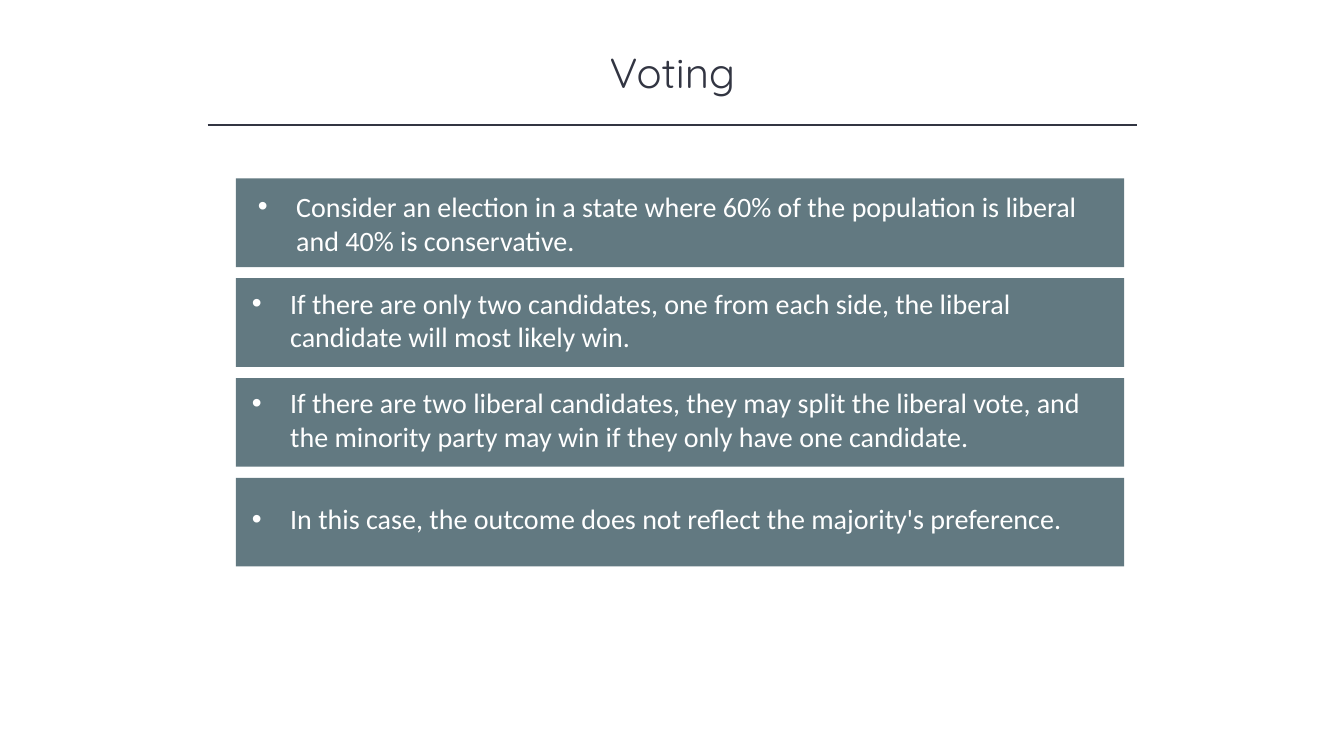
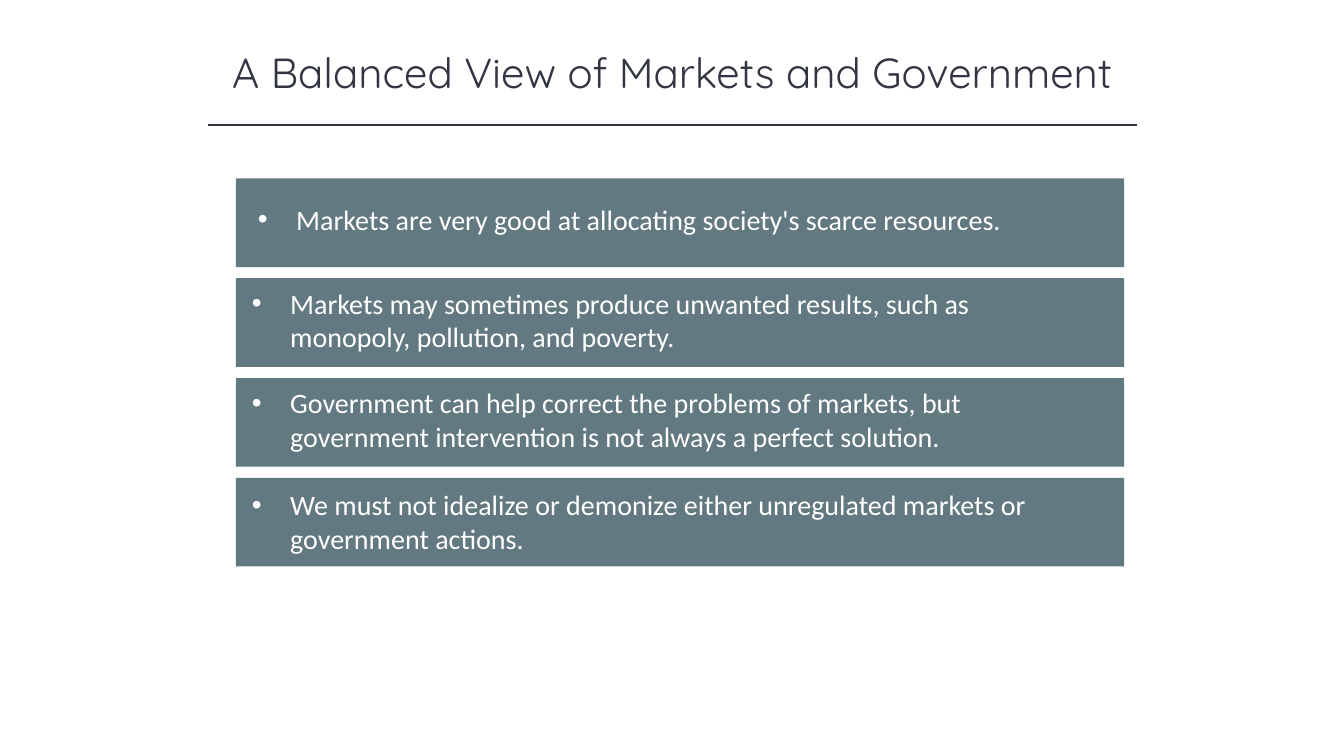
from lxml import etree
from pptx import Presentation
from pptx import util as u
from pptx.dml.color import RGBColor
from pptx.enum import shapes, text
from pptx.oxml.ns import qn

INK, SLATE, WHITE = "323542", "627981", "FFFFFF"
PX = 9144  # EMU per px, 100 px to the inch

BAND_LEFT, BAND_TOP, BAND_W, BAND_H, BAND_STEP = 234, 177, 881, 88, 99
LABEL_W, HANGING = 854, 38

# Each point: text, number of lines, distance of the label below the band's top
SLIDES = [
    ("Voting", [
        ("Consider an election in a state where 60% of the population is liberal "
         "and 40% is conservative.", 2, 6),
        ("If there are only two candidates, one from each side, the liberal "
         "candidate will most likely win.", 2, 3),
        ("If there are two liberal candidates, they may split the liberal vote, "
         "and the minority party may win if they only have one candidate.", 2, 3),
        ("In this case, the outcome does not reflect the majority's preference.",
         1, 19),
    ]),
    ("A Balanced View of Markets and Government", [
        ("Markets are very good at allocating society's scarce resources.", 1, 19),
        ("Markets may sometimes produce unwanted results, such as monopoly, "
         "pollution, and poverty.", 2, 3),
        ("Government can help correct the problems of markets, but government "
         "intervention is not always a perfect solution.", 2, 3),
        ("We must not idealize or demonize either unregulated markets or "
         "government actions.", 2, 5),
    ]),
]


def px(*lengths):
    return [u.Emu(n * PX) for n in lengths]


def rgb(color):
    return RGBColor.from_string(color)


class Deck:
    TITLE = {"name": "Quicksand", "size": u.Pt(30)}
    BODY = {"name": "Calibri", "size": u.Pt(20)}

    def __init__(self):
        self.prs = Presentation()
        self.prs.slide_width, self.prs.slide_height = px(1333, 750)
        self.s = None

    def add_slide(self, title):
        self.s = self.prs.slides.add_slide(self.prs.slide_layouts[6])
        sp = self.s.shapes.add_textbox(*px(167, 41, 1000, 61))
        self.set_text(sp, title, self.TITLE, INK, text.PP_ALIGN.CENTER)
        self.rule(206, 124, 1128)

    def set_text(self, sp, words, font, color, align):
        tf = sp.text_frame
        frame = {"word_wrap": True, "vertical_anchor": text.MSO_ANCHOR.TOP,
                 "auto_size": text.MSO_AUTO_SIZE.SHAPE_TO_FIT_TEXT}
        for name, value in frame.items():
            setattr(tf, name, value)
        p = tf.paragraphs[0]
        p.alignment = align
        r = p.add_run()
        r.text = words
        for name, value in font.items():
            setattr(r.font, name, value)
        r.font.color.rgb = rgb(color)
        return p

    def rule(self, left, y, right):
        line = self.s.shapes.add_connector(
            shapes.MSO_CONNECTOR.STRAIGHT, *px(left, y, right, y))
        line.line.color.rgb = rgb(INK)
        line.line.width = u.Pt(1)
        etree.SubElement(line._element.spPr, qn("a:effectLst"))

    def rect(self, parent, left, top, width, height):
        sp = parent.shapes.add_shape(
            shapes.MSO_SHAPE.RECTANGLE, *px(left, top, width, height))
        sp.shadow.inherit = False
        sp.fill.solid()
        sp.fill.fore_color.rgb = rgb(SLATE)
        sp.line.fill.background()
        return sp

    def bullet(self, p):
        pPr = p._p.get_or_add_pPr()
        indent = px(HANGING)[0]
        pPr.set("marL", str(indent))
        pPr.set("indent", str(-indent))
        etree.SubElement(pPr, qn("a:buFont"), typeface="Arial")
        etree.SubElement(pPr, qn("a:buChar"), char="•")

    def band(self, row, words, lines, drop):
        """Add a full-width band grouped with its bulleted label."""
        group = self.s.shapes.add_group_shape()
        top = BAND_TOP + row * BAND_STEP
        self.rect(group, BAND_LEFT, top, BAND_W, BAND_H)
        inset = 6 if row else 12
        label = self.rect(group, BAND_LEFT + inset, top + drop,
                          LABEL_W, 11 + 33 * lines)
        p = self.set_text(label, words, self.BODY, WHITE, text.PP_ALIGN.LEFT)
        self.bullet(p)


def main():
    deck = Deck()
    for title, points in SLIDES:
        deck.add_slide(title)
        for row, point in enumerate(points):
            deck.band(row, *point)
    deck.prs.save("out.pptx")


if __name__ == "__main__":
    main()
